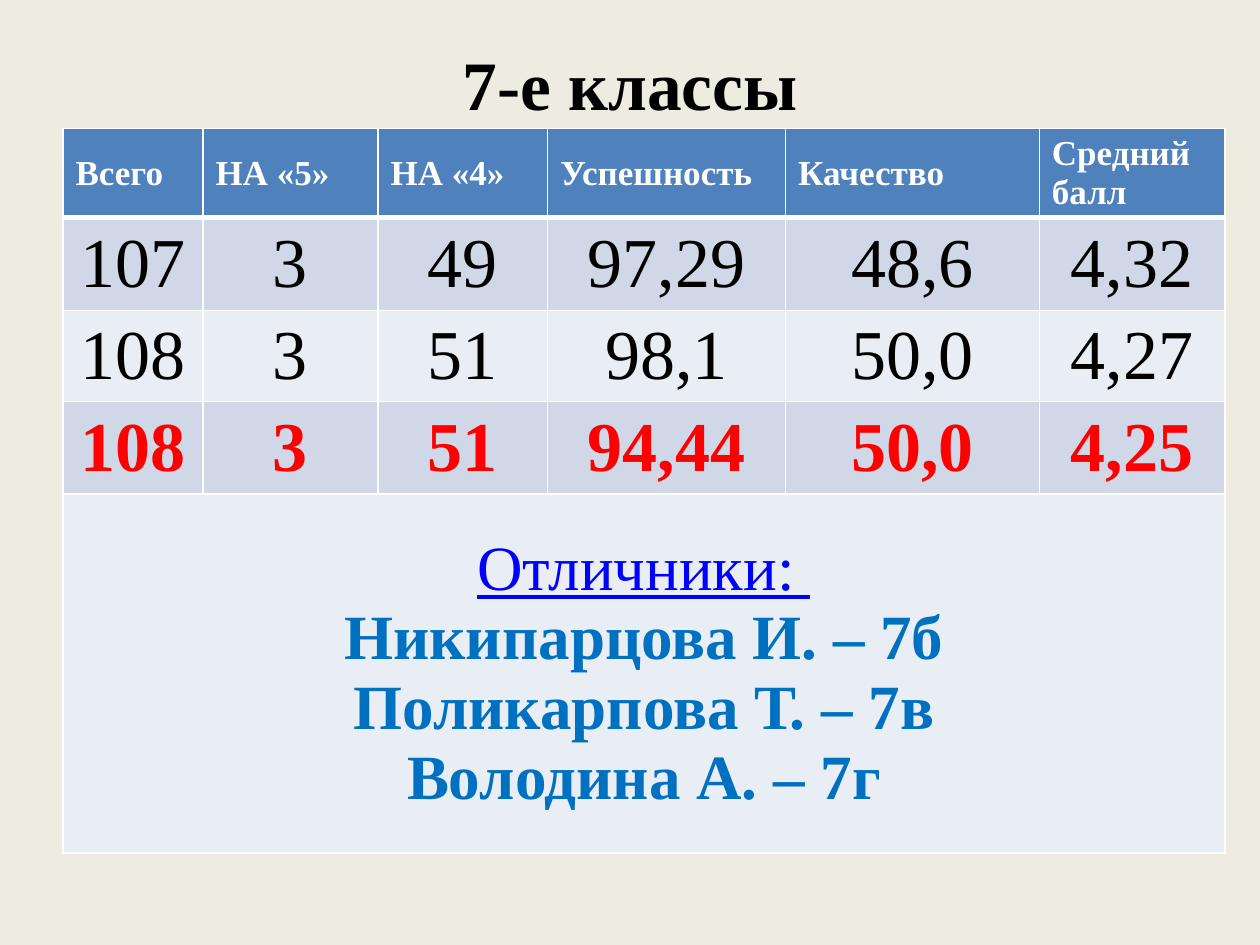
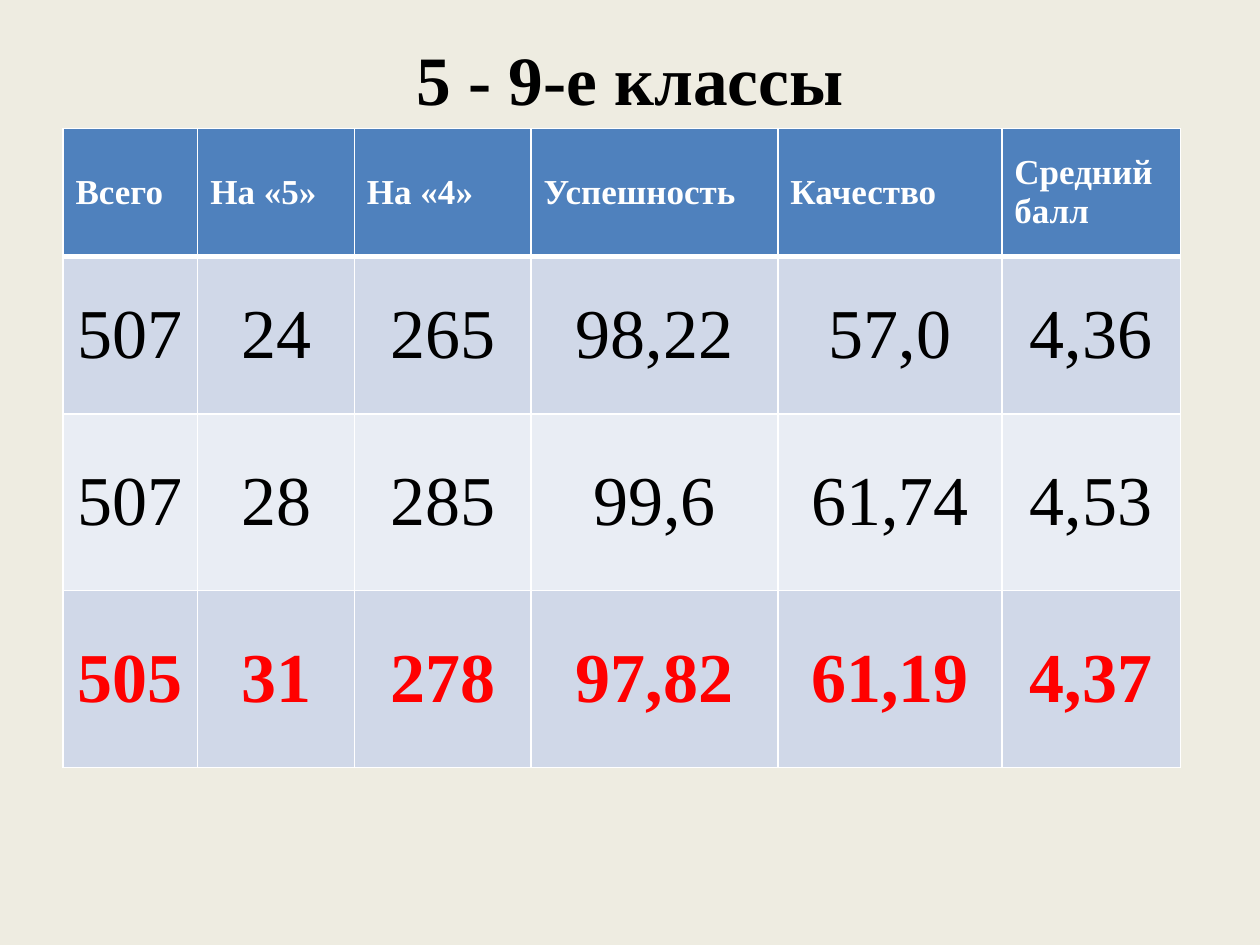
from lxml import etree
from pptx import Presentation
from pptx import util as u
from pptx.dml.color import RGBColor
from pptx.enum import text
from pptx.oxml import ns

FONT = "Times New Roman"
COLOURS = {
    "background": "EEECE1", "header": "4F81BD", "odd": "D0D8E8", "even": "E9EDF4",
    "border": "FFFFFF", "light": "FFFFFF", "dark": "000000",
    "latest": "FF0000", "caption": "0000FF", "pupil": "0070C0",
}
TABLE_LEFT, TABLE_TOP = 36, 73.44
TITLE_TOP = 21.6


def colour(name):
    return RGBColor.from_string(COLOURS[name])


def add_run(paragraph, words, size, colour_name, bold=False, underline=False):
    run = paragraph.add_run()
    run.text = words
    run.font.name, run.font.size = FONT, u.Pt(size)
    run.font.bold, run.font.underline = bold, underline
    run.font.color.rgb = colour(colour_name)


def add_title(slide, words, height):
    title = slide.shapes.title
    title.left, title.top = u.Pt(36), u.Pt(TITLE_TOP)
    title.width, title.height = u.Pt(648), u.Pt(height)
    frame = title.text_frame
    frame.auto_size = text.MSO_AUTO_SIZE.NONE
    frame.vertical_anchor = text.MSO_ANCHOR.MIDDLE
    paragraph = frame.paragraphs[0]
    paragraph.alignment = text.PP_ALIGN.CENTER
    add_run(paragraph, words, 39.6, "dark", bold=True)


def add_border(cell, side, width):
    properties = cell._tc.get_or_add_tcPr()
    line = etree.SubElement(properties, ns.qn(f"a:ln{side}"), w=str(u.Pt(width)))
    fill = etree.SubElement(line, ns.qn("a:solidFill"))
    etree.SubElement(fill, ns.qn("a:srgbClr"), val=COLOURS["border"])


def format_cell(cell, row):
    """Header row, then alternating bands; white rules all round."""
    for side in "LRTB":
        thick = (row == 0 and side == "B") or (row == 1 and side == "T")
        add_border(cell, side, 3 if thick else 1)
    cell.fill.solid()
    cell.fill.fore_color.rgb = colour("header" if row == 0 else "odd" if row % 2 else "even")
    cell.vertical_anchor = text.MSO_ANCHOR.MIDDLE
    cell.margin_top = cell.margin_bottom = u.Pt(3)


def add_results_table(slide, left, top, widths, heights, rows):
    frame = slide.shapes.add_table(len(heights), len(widths), u.Pt(left), u.Pt(top),
                                   u.Pt(sum(widths)), u.Pt(sum(heights)))
    table = frame.table
    for column, width in zip(table.columns, widths):
        column.width = u.Pt(width)
    for row, height in zip(table.rows, heights):
        row.height = u.Pt(height)
    for row in range(len(heights)):
        for column in range(len(widths)):
            format_cell(table.cell(row, column), row)

    # Headings and yearly figures, the latest year in red
    latest = len(rows) - 1
    for row, values in enumerate(rows):
        for column, value in enumerate(values):
            paragraph = table.cell(row, column).text_frame.paragraphs[0]
            if row == 0:
                add_run(paragraph, value, 20, "light", bold=True)
            else:
                paragraph.alignment = text.PP_ALIGN.CENTER
                add_run(paragraph, value, 40, "latest" if row == latest else "dark",
                        bold=row == latest)
    return table


def add_top_pupils(table, pupils):
    """Fill the merged bottom row with the list of top pupils."""
    last_row = len(table.rows) - 1
    cell = table.cell(last_row, 0)
    cell.merge(table.cell(last_row, len(table.columns) - 1))
    frame = cell.text_frame
    add_run(frame.paragraphs[0], "Отличники: ", 36, "caption", underline=True)
    for pupil in pupils:
        add_run(frame.add_paragraph(), pupil, 36, "pupil", bold=True)
    for paragraph in frame.paragraphs:
        paragraph.alignment = text.PP_ALIGN.CENTER


def add_results_slide(presentation, title, title_height, widths, heights, rows, pupils=()):
    slide = presentation.slides.add_slide(presentation.slide_layouts[5])
    add_title(slide, title, title_height)
    table = add_results_table(slide, TABLE_LEFT, TABLE_TOP, widths, heights, rows)
    if pupils:
        add_top_pupils(table, pupils)


def headings(on):
    return ["Всего", f"{on} «5»", f"{on} «4»", "Успешность", "Качество", "Средний балл"]


def main():
    presentation = Presentation()
    presentation.slide_width, presentation.slide_height = u.Pt(720), u.Pt(540)
    background = presentation.slide_master.background.fill
    background.solid()
    background.fore_color.rgb = colour("background")

    # Grade 7
    add_results_slide(
        presentation, "7-е классы", 51.84,
        [80, 100, 97, 136, 145, 106], [51, 53, 52, 53, 205],
        [headings("НА"),
         ["107", "3", "49", "97,29", "48,6", "4,32"],
         ["108", "3", "51", "98,1", "50,0", "4,27"],
         ["108", "3", "51", "94,44", "50,0", "4,25"]],
        ["Никипарцова И. – 7б", "Поликарпова Т. – 7в", "Володина А. – 7г"])

    # Grades 5 to 9
    add_results_slide(
        presentation, "5 - 9-е классы", 46.08,
        [77, 89.5, 101, 141, 128, 102], [73, 90, 101, 101],
        [headings("На"),
         ["507", "24", "265", "98,22", "57,0", "4,36"],
         ["507", "28", "285", "99,6", "61,74", "4,53"],
         ["505", "31", "278", "97,82", "61,19", "4,37"]])

    presentation.save("out.pptx")


if __name__ == "__main__":
    main()
